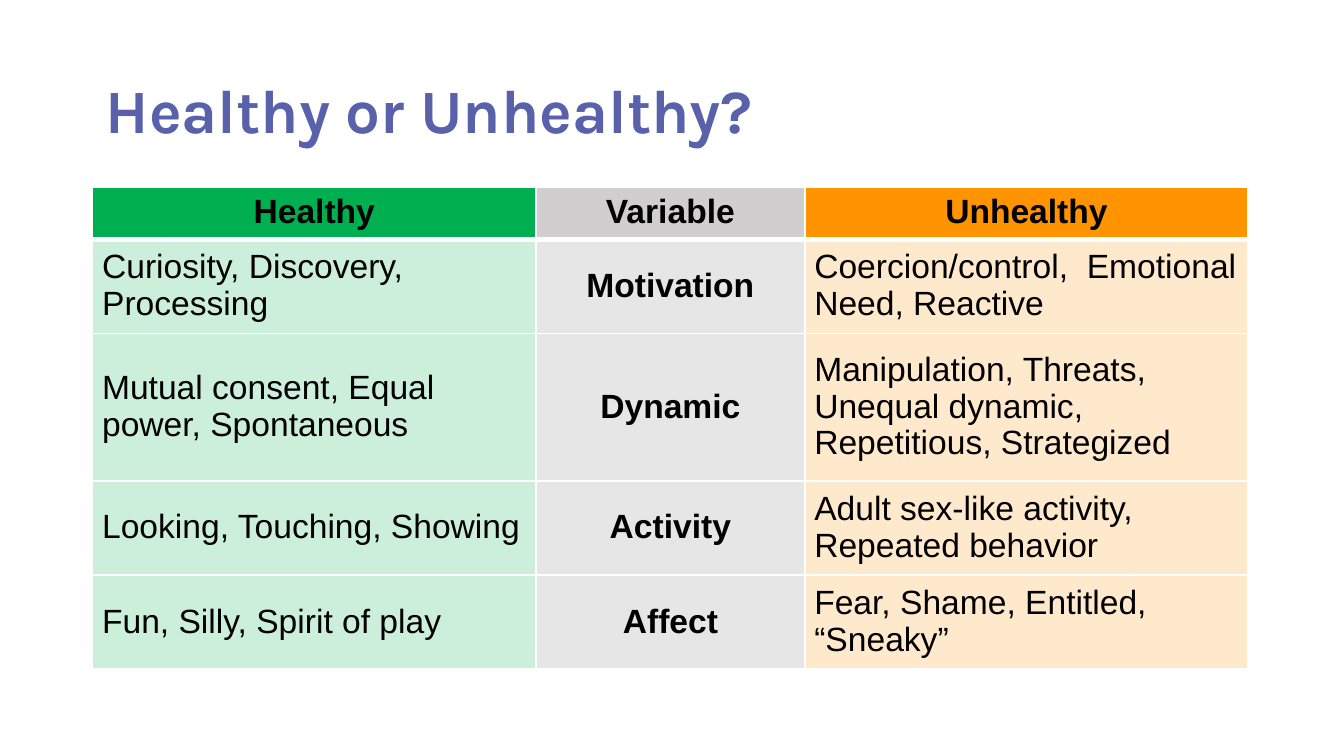
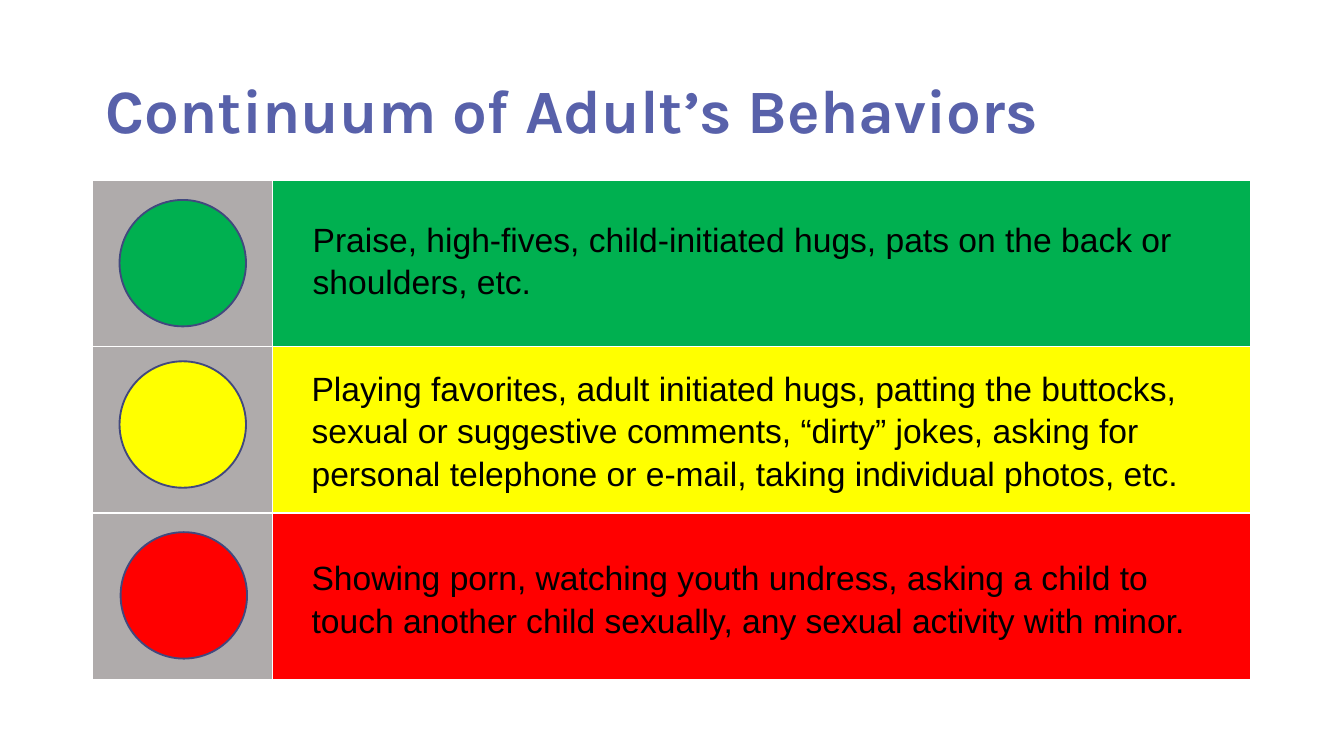
import dataclasses

import pptx
import pptx.dml.color
import pptx.enum.shapes
import pptx.enum.text
import pptx.oxml
import pptx.oxml.ns
import pptx.util

Cm = pptx.util.Cm
Pt = pptx.util.Pt
ALIGN = pptx.enum.text.PP_ALIGN
ANCHOR = pptx.enum.text.MSO_ANCHOR


@dataclasses.dataclass(frozen=True)
class Theme:
    title_font: str = "Karla"
    body_font: str = "Arial"
    title_size: int = 33
    body_size: int = 18
    title: str = "5861AA"
    text: str = "000000"
    white: str = "FFFFFF"
    green: str = "00B050"
    orange: str = "FF9300"
    yellow: str = "FFFF00"
    red: str = "FF0000"
    head_grey: str = "D0CECE"
    cell_grey: str = "E7E6E6"
    lamp_grey: str = "AFABAB"
    lamp_line: str = "41487E"
    tint: int = 20


T = Theme()
TITLE_BOX = (1.75, 0.76, 21.9, 2.77)

COMPARISON_HEAD = [("Healthy", T.green), ("Variable", T.head_grey), ("Unhealthy", T.orange)]
# Each cell is a list of paragraphs; \n is a line break inside one
COMPARISON_ROWS = [
    (1.78, ["Curiosity, Discovery, Processing"], ["Motivation"],
     ["Coercion/control,  Emotional Need, Reactive"]),
    (2.79, ["Mutual consent, Equal power, Spontaneous"], ["Dynamic"],
     ["Manipulation, Threats,\nUnequal dynamic,\nRepetitious, Strategized"]),
    (1.78, ["Looking, Touching, Showing"], ["Activity"],
     ["Adult sex-like activity,", "Repeated behavior"]),
    (1.78, ["Fun, Silly, Spirit of play"], ["Affect"],
     ["Fear, Shame, Entitled, “Sneaky”"]),
]

# Colour, circle offset (x, y), text offset (x, y), text size, wording
LEVELS = [
    (T.green, (0.51, 0.38), (3.91, 0.56), (17.4, 1.8),
     "Praise, high-fives, child-initiated hugs, pats on the back or shoulders, etc."),
    (T.yellow, (0.51, 0.28), (3.89, 0.23), (17.78, 2.57),
     "Playing favorites, adult initiated hugs, patting the buttocks, sexual or suggestive "
     "comments, “dirty” jokes, asking for personal telephone or e-mail, taking individual "
     "photos, etc."),
    (T.red, (0.53, 0.36), (3.89, 0.66), (17.78, 1.8),
     "Showing porn, watching youth undress, asking a child to touch another child sexually, "
     "any sexual activity with minor."),
]


def rgb(color):
    return pptx.dml.color.RGBColor.from_string(color)


def write(tf, paragraphs, font=T.body_font, size=T.body_size, color=T.text,
          bold=False, align=ALIGN.LEFT, spacing=1.0):
    for i, text in enumerate(paragraphs):
        p = tf.add_paragraph() if i else tf.paragraphs[0]
        p.alignment = align
        p.line_spacing = spacing
        for j, line in enumerate(text.split("\n")):
            if j:
                p.add_line_break()
            r = p.add_run()
            r.text = line
            r.font.name, r.font.size, r.font.bold = font, Pt(size), bold
            r.font.color.rgb = rgb(color)


def add_text(slide, box, text, anchor=ANCHOR.TOP, **style):
    tf = slide.shapes.add_textbox(*map(Cm, box)).text_frame
    tf.word_wrap = True
    tf.vertical_anchor = anchor
    write(tf, [text], **style)


def add_title(slide, box, text):
    add_text(slide, box, text, anchor=ANCHOR.MIDDLE, font=T.title_font,
             size=T.title_size, color=T.title, bold=True, spacing=0.9)


def add_grid(slide, left, top, cols, rows):
    frame = slide.shapes.add_table(len(rows), len(cols), Cm(left), Cm(top),
                                   Cm(sum(cols)), Cm(sum(rows)))
    table = frame.table
    table.first_row = table.horz_banding = False
    for col, width in zip(table.columns, cols):
        col.width = Cm(width)
    for row, height in zip(table.rows, rows):
        row.height = Cm(height)
    return table


def paint_cell(cell, color, alpha=None, top=1, bottom=1):
    cell.fill.solid()
    cell.fill.fore_color.rgb = rgb(color)
    tcPr = cell._tc.get_or_add_tcPr()
    if alpha is not None:
        clr = tcPr.find(".//" + pptx.oxml.ns.qn("a:srgbClr"))
        clr.append(pptx.oxml.parse_xml(
            f'<a:alpha {pptx.oxml.ns.nsdecls("a")} val="{alpha * 1000}"/>'))
    # Borders come before the fill
    for i, (side, width) in enumerate([("L", 1), ("R", 1), ("T", top), ("B", bottom)]):
        tcPr.insert(i, pptx.oxml.parse_xml(
            f'<a:ln{side} {pptx.oxml.ns.nsdecls("a")} w="{Pt(width)}"><a:solidFill>'
            f'<a:srgbClr val="{T.white}"/></a:solidFill></a:ln{side}>'))


def fill_cell(cell, paragraphs, **style):
    cell.vertical_anchor = ANCHOR.MIDDLE
    cell.margin_left = cell.margin_right = Cm(0.18)
    cell.margin_top = cell.margin_bottom = Cm(0.09)
    write(cell.text_frame, paragraphs, spacing=0.97, **style)


def add_comparison(slide, left, top):
    heights = [0.99] + [row[0] for row in COMPARISON_ROWS]
    table = add_grid(slide, left, top, [8.38, 5.08, 8.38], heights)
    # Header row
    for c, (text, color) in enumerate(COMPARISON_HEAD):
        paint_cell(table.cell(0, c), color, bottom=3)
        fill_cell(table.cell(0, c), [text], bold=True, align=ALIGN.CENTER)
    # Body rows: tinted sides, grey middle
    fills = [(T.green, T.tint), (T.cell_grey, None), (T.orange, T.tint)]
    for r, (_, *texts) in enumerate(COMPARISON_ROWS, 1):
        for c, (paragraphs, (color, alpha)) in enumerate(zip(texts, fills)):
            middle = c == 1
            paint_cell(table.cell(r, c), color, alpha, top=3 if r == 1 else 1)
            fill_cell(table.cell(r, c), paragraphs, bold=middle,
                      align=ALIGN.CENTER if middle else ALIGN.LEFT)


def add_lamp(slide, left, top, color, size=2.39):
    sp = slide.shapes.add_shape(pptx.enum.shapes.MSO_SHAPE.OVAL,
                                Cm(left), Cm(top), Cm(size), Cm(size))
    sp.shadow.inherit = False
    sp.fill.solid()
    sp.fill.fore_color.rgb = rgb(color)
    sp.line.color.rgb = rgb(T.lamp_line)
    sp.line.width = Pt(1)


def add_continuum(slide, left, top, row_height=3.15):
    # Colour bands
    table = add_grid(slide, left, top, [3.4, 18.49], [row_height] * len(LEVELS))
    for i, (color, *_) in enumerate(LEVELS):
        paint_cell(table.cell(i, 0), T.lamp_grey)
        paint_cell(table.cell(i, 1), color)
    # Circles and wording on the bands
    for i, (color, lamp, offset, size, text) in enumerate(LEVELS):
        y = top + i * row_height
        add_lamp(slide, left + lamp[0], y + lamp[1], color)
        add_text(slide, (left + offset[0], y + offset[1], *size), text, spacing=1.06)


def main():
    prs = pptx.Presentation()
    prs.slide_width, prs.slide_height = Cm(25.4), Cm(14.29)
    for title, add_body, top in [
        ("Healthy or Unhealthy?", add_comparison, 3.53),
        ("Continuum of Adult’s Behaviors", add_continuum, 3.4),
    ]:
        slide = prs.slides.add_slide(prs.slide_layouts[6])
        add_title(slide, TITLE_BOX, title)
        add_body(slide, TITLE_BOX[0], top)
    prs.save("out.pptx")


if __name__ == "__main__":
    main()
